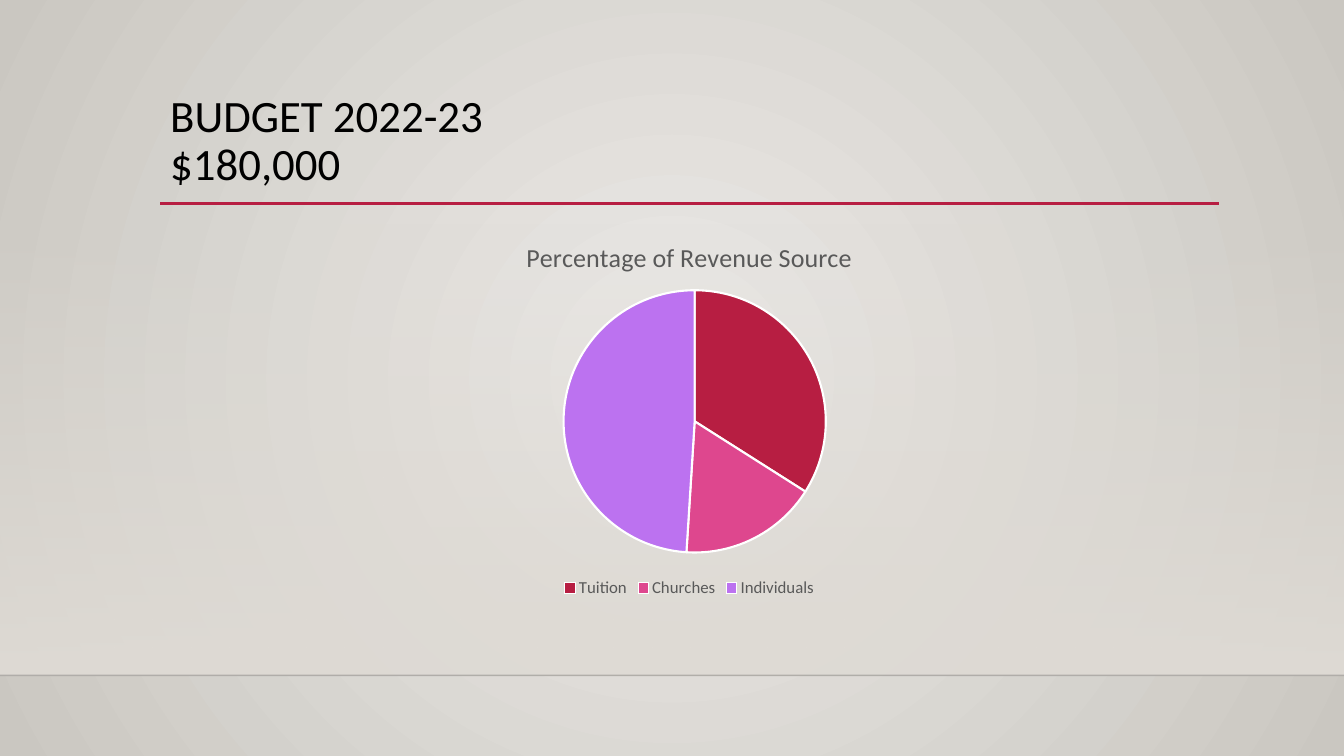
import pptx
import pptx.chart.data
import pptx.dml.color
import pptx.enum.chart
import pptx.enum.shapes
import pptx.enum.text
import pptx.oxml
import pptx.oxml.ns
import pptx.util

Cm = pptx.util.Cm
Pt = pptx.util.Pt
qn = pptx.oxml.ns.qn
DRAWING = pptx.oxml.ns.nsdecls("a")


def color(value):
    return pptx.dml.color.RGBColor.from_string(value)


def format_font(font, name="Calibri", size=12, fill="000000", bold=False):
    font.name = name
    font.size = Pt(size)
    font.bold = bold
    font.color.rgb = color(fill)


def write(frame, text, spacing=None, **style):
    para = frame.paragraphs[0]
    para.text = text
    if spacing:
        para.line_spacing = spacing
    for span in para.runs:
        format_font(span.font, **style)


def set_gradient(fill, parent, stops, direction):
    """Give a fill the stops (position, color, opacity), all in percent."""
    fill.gradient()
    stop_xml = "".join(
        f'<a:gs pos="{position * 1000}"><a:srgbClr val="{value}">'
        f'<a:alpha val="{opacity * 1000}"/></a:srgbClr></a:gs>'
        for position, value, opacity in stops)
    gradient = pptx.oxml.parse_xml(
        f'<a:gradFill {DRAWING} rotWithShape="1">'
        f"<a:gsLst>{stop_xml}</a:gsLst>{direction}</a:gradFill>")
    parent.replace(parent.find(qn("a:gradFill")), gradient)


class BudgetSlide:
    accent = "B71E42"
    muted = "595959"
    slices = ("B71E42", "DE478E", "BC72F0")

    def __init__(self, deck):
        self.page = deck.slides.add_slide(deck.slide_layouts[6])
        self.shapes = self.page.shapes

    def background(self, inner, outer):
        set_gradient(
            self.page.background.fill, self.page._element.cSld.bg.bgPr,
            [(0, inner, 100), (100, outer, 100)],
            '<a:path path="circle"><a:fillToRect l="50000" t="50000" '
            'r="50000" b="50000"/></a:path>')

    def fading_panel(self, left, top, width, height, fill):
        panel = self.shapes.add_shape(
            pptx.enum.shapes.MSO_SHAPE.RECTANGLE,
            Cm(left), Cm(top), Cm(width), Cm(height))
        panel.shadow.inherit = False
        panel.line.fill.background()
        set_gradient(panel.fill, panel._element.spPr,
                     [(0, fill, 0), (100, fill, 100)],
                     '<a:lin ang="5400000" scaled="0"/>')

    def rule(self, left, right, y, stroke, weight, opacity=100):
        rule = self.shapes.add_connector(
            pptx.enum.shapes.MSO_CONNECTOR.STRAIGHT,
            Cm(left), Cm(y), Cm(right), Cm(y))
        rule.line.width = Pt(weight)
        rule.line.color.rgb = color(stroke)
        properties = rule._element.spPr
        if opacity < 100:
            alpha = pptx.oxml.parse_xml(
                f'<a:alpha {DRAWING} val="{opacity * 1000}"/>')
            next(properties.iter(qn("a:srgbClr"))).append(alpha)
        properties.append(pptx.oxml.parse_xml(f"<a:effectLst {DRAWING}/>"))

    def title(self, left, top, width, height, text):
        box = self.shapes.add_textbox(
            Cm(left), Cm(top), Cm(width), Cm(height))
        box.text_frame.word_wrap = True
        box.text_frame.vertical_anchor = pptx.enum.text.MSO_ANCHOR.TOP
        write(box.text_frame, text, spacing=0.9, size=32)

    def pie(self, left, top, width, height, title, revenue):
        data = pptx.chart.data.CategoryChartData()
        data.categories = list(revenue)
        data.add_series("Series 1", list(revenue.values()))
        chart = self.shapes.add_chart(
            pptx.enum.chart.XL_CHART_TYPE.PIE,
            Cm(left), Cm(top), Cm(width), Cm(height), data).chart
        format_font(chart.font, size=10)
        chart.has_title = True
        write(chart.chart_title.text_frame, title, size=18.6, fill=self.muted)
        chart.chart_title.include_in_layout = False

        # Legend
        chart.has_legend = True
        chart.legend.position = pptx.enum.chart.XL_LEGEND_POSITION.BOTTOM
        chart.legend.include_in_layout = False
        format_font(chart.legend.font, fill=self.muted)

        # Slices
        plot = chart.plots[0]
        plot.vary_by_categories = True
        for index, fill in enumerate(self.slices):
            piece = plot.series[0].points[index].format
            piece.fill.solid()
            piece.fill.fore_color.rgb = color(fill)
            piece.line.color.rgb = color("FFFFFF")
            piece.line.width = Pt(1.5)

        # Place of the pie inside the chart
        area = chart._chartSpace.chart.plotArea
        for old in area.findall(qn("c:layout")):
            area.remove(old)
        places = {"x": 0.38, "y": 0.18, "w": 0.25, "h": 0.69}
        place_xml = "".join(
            f'<c:{key} val="{value}"/>' for key, value in places.items())
        area.insert(0, pptx.oxml.parse_xml(
            f'<c:layout {pptx.oxml.ns.nsdecls("c")}><c:manualLayout>'
            '<c:layoutTarget val="inner"/><c:xMode val="edge"/>'
            f'<c:yMode val="edge"/>{place_xml}</c:manualLayout></c:layout>'))


def main():
    deck = pptx.Presentation()
    deck.slide_width = Cm(33.87)
    deck.slide_height = Cm(19.05)
    slide = BudgetSlide(deck)

    # Backdrop with its floor line
    slide.background("ECEAE7", "CAC7C1")
    slide.fading_panel(0, 5.61, 33.87, 11.41, "DFDBD5")
    slide.rule(0, 33.87, 17.02, "000001", 1, opacity=20)

    # Heading
    slide.rule(4.04, 30.73, 5.13, slide.accent, 2.5)
    slide.title(4.04, 2.24, 26.67, 2.92, "BUDGET 2022-23\v$180,000")

    # Revenue chart
    slide.pie(4.04, 5.59, 26.67, 9.58, "Percentage of Revenue Source",
              {"Tuition": 34, "Churches": 17, "Individuals": 49})
    deck.save("out.pptx")


if __name__ == "__main__":
    main()
